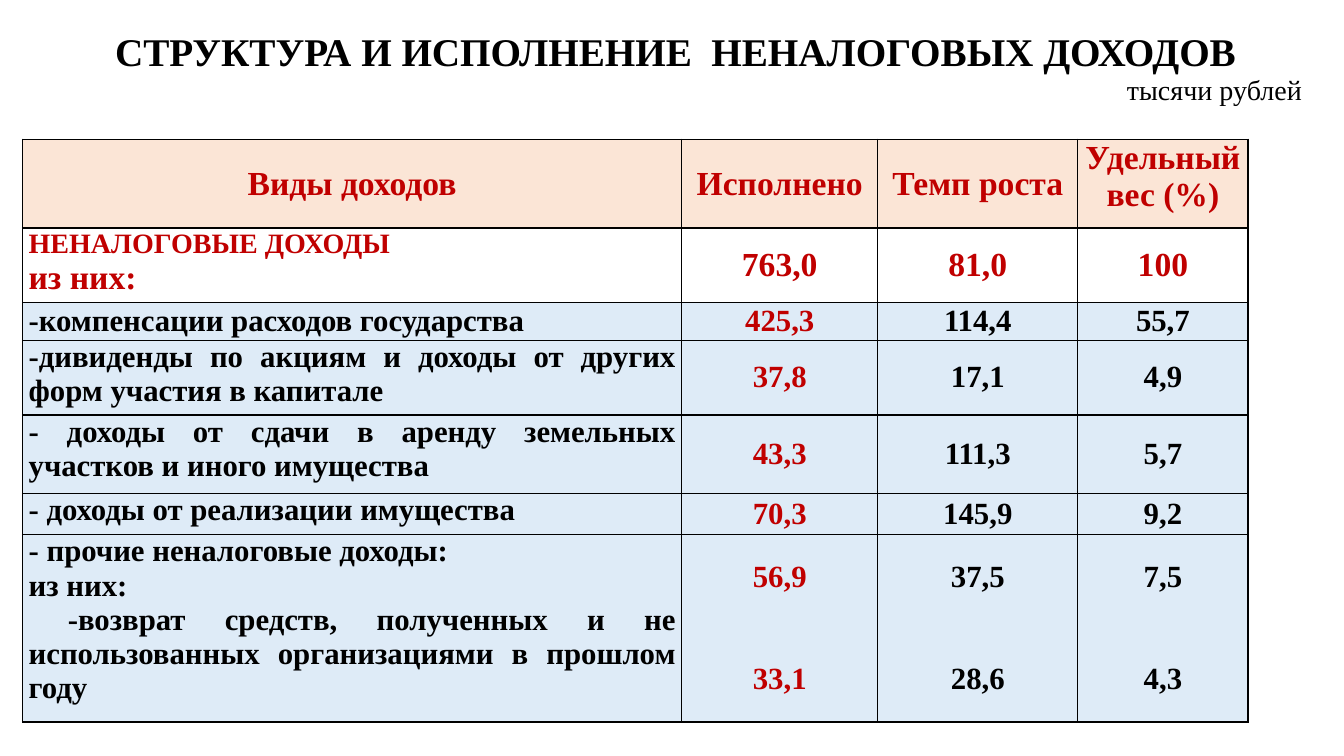
from lxml.etree import SubElement
from pptx import Presentation
from pptx.dml.color import RGBColor
from pptx.enum.text import MSO_ANCHOR, MSO_AUTO_SIZE, PP_ALIGN
from pptx.oxml.ns import qn
from pptx.util import Pt

RED = RGBColor(0xC0, 0x00, 0x00)
BLACK = RGBColor(0x00, 0x00, 0x00)
WHITE = RGBColor(0xFF, 0xFF, 0xFF)
PEACH = RGBColor(0xFB, 0xE5, 0xD6)
PALE_BLUE = RGBColor(0xDE, 0xEB, 0xF7)

COL_WIDTHS = [471, 140, 143, 121.5]
ROW_HEIGHTS = [63.4, 53.3, 26.8, 53.5, 56, 29.4, 133.9]
SUBITEM_INDENT = 28
SUBITEM_GAP = 48.6  # two lines between the values of the last row

# Each cell is a list of lines
ROWS = [
    [["Виды доходов"], ["Исполнено"], ["Темп роста"], ["Удельный вес (%)"]],
    [["НЕНАЛОГОВЫЕ ДОХОДЫ", "из них:"], ["763,0"], ["81,0"], ["100"]],
    [["-компенсации расходов государства"], ["425,3"], ["114,4"], ["55,7"]],
    [["-дивиденды по акциям и доходы от других форм участия в капитале"],
     ["37,8"], ["17,1"], ["4,9"]],
    [["- доходы от сдачи в аренду земельных участков и иного имущества"],
     ["43,3"], ["111,3"], ["5,7"]],
    [["- доходы от реализации имущества"], ["70,3"], ["145,9"], ["9,2"]],
    [["- прочие неналоговые доходы:", "из них:",
      "-возврат средств, полученных и не использованных организациями в прошлом году"],
     ["56,9", "33,1"], ["37,5", "28,6"], ["7,5", "4,3"]],
]


class SlideBuilder:
    def __init__(self, slide, font="Times New Roman"):
        self.slide = slide
        self.font = font

    def style(self, p, size, color=BLACK, bold=True, align=PP_ALIGN.CENTER):
        p.alignment = align
        p.font.name = self.font
        p.font.size = Pt(size)
        p.font.bold = bold
        p.font.color.rgb = color

    def place(self, sp, left, top, width, height):
        sp.left, sp.top, sp.width, sp.height = map(Pt, (left, top, width, height))

    def title(self, text, box, size):
        sp = self.slide.shapes.title
        self.place(sp, *box)
        tf = sp.text_frame
        tf.text = text
        tf.word_wrap = True
        tf.auto_size = MSO_AUTO_SIZE.NONE
        tf.vertical_anchor = MSO_ANCHOR.MIDDLE
        self.style(tf.paragraphs[0], size)

    def note(self, text, box, size):
        tf = self.slide.shapes.add_textbox(*map(Pt, box)).text_frame
        tf.text = text
        tf.word_wrap = True
        tf.vertical_anchor = MSO_ANCHOR.MIDDLE
        self.style(tf.paragraphs[0], size, bold=False, align=PP_ALIGN.RIGHT)

    def borders(self, cell, width=1):
        tc_pr = cell._tc.get_or_add_tcPr()
        for i, side in enumerate(("lnL", "lnR", "lnT", "lnB")):
            ln = tc_pr.makeelement(qn(f"a:{side}"), {"w": str(Pt(width))})
            fill = SubElement(ln, qn("a:solidFill"))
            SubElement(fill, qn("a:srgbClr"), val=str(BLACK))
            tc_pr.insert(i, ln)

    def cell(self, cell, lines, fill, anchor):
        cell.fill.solid()
        cell.fill.fore_color.rgb = fill
        cell.margin_left = cell.margin_right = Pt(4.5)
        cell.margin_top = cell.margin_bottom = 0
        cell.vertical_anchor = anchor
        cell.text_frame.text = "\n".join(lines)
        self.borders(cell)
        return cell.text_frame.paragraphs

    def table(self, rows, left, top, widths, heights):
        table = self.slide.shapes.add_table(
            len(rows), len(widths), Pt(left), Pt(top),
            Pt(sum(widths)), Pt(sum(heights))).table
        for col, width in zip(table.columns, widths):
            col.width = Pt(width)
        for row, height in zip(table.rows, heights):
            row.height = Pt(height)
        for r, row in enumerate(rows):
            fill = (PEACH, WHITE)[r] if r < 2 else PALE_BLUE
            for c, lines in enumerate(row):
                label = c == 0 and r > 0
                at_top = (label and r != 2) or (r == 0 and c == 3)
                anchor = MSO_ANCHOR.TOP if at_top else MSO_ANCHOR.MIDDLE
                color = RED if r < 2 or c == 1 else BLACK
                align = PP_ALIGN.JUSTIFY if label else PP_ALIGN.CENTER
                for i, p in enumerate(self.cell(table.cell(r, c), lines, fill, anchor)):
                    size = 22 if r > 1 else 20 if label and i == 0 else 24
                    self.style(p, size, color, align=align)
                    if i and not label:
                        p.space_before = Pt(SUBITEM_GAP)
                    if label and i == 2:
                        p._p.get_or_add_pPr().set("indent", str(Pt(SUBITEM_INDENT)))


def main():
    prs = Presentation()
    prs.slide_width, prs.slide_height = Pt(960), Pt(540)
    s = SlideBuilder(prs.slides.add_slide(prs.slide_layouts[5]))

    # Heading and unit of measure
    s.title("СТРУКТУРА И ИСПОЛНЕНИЕ  НЕНАЛОГОВЫХ ДОХОДОВ", (21, 16, 923, 40), 28)
    s.note("тысячи рублей", (737, 49, 200, 30), 20)

    # Income table
    s.table(ROWS, 16, 99.5, COL_WIDTHS, ROW_HEIGHTS)

    prs.save("out.pptx")


if __name__ == "__main__":
    main()
